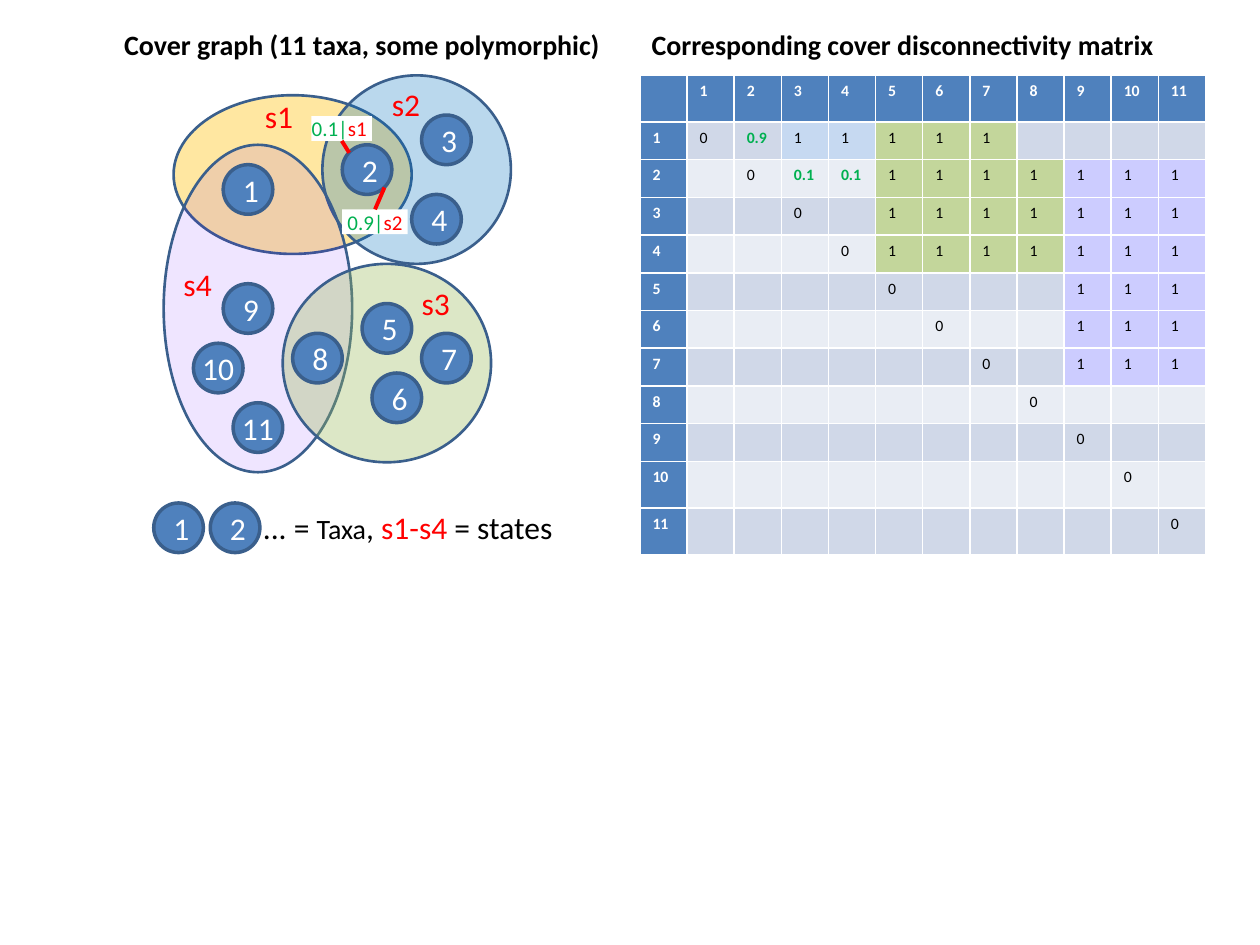
from pptx import Presentation
from pptx.dml.color import RGBColor
from pptx.enum.shapes import MSO_CONNECTOR, MSO_SHAPE
from pptx.enum.text import MSO_ANCHOR, MSO_AUTO_SIZE, PP_ALIGN
from pptx.oxml.ns import qn
from pptx.util import Inches, Mm, Pt
from lxml.etree import SubElement

COLORS = {
    "white": "FFFFFF", "black": "000000", "red": "FF0000",
    "blue": "4F81BD", "edge": "3A5F8C", "green": "00B050",
    "gold": "FFC000", "sky": "0070C0", "violet": "6600FF", "leaf": "9BBB59",
    "odd": "D0D8E8", "even": "E9EDF4",
    "pale": "C6D9F1", "moss": "C3D69B", "lilac": "CCCCFF",
}
# Positions and sizes below count cells of a 2 mm grid.
DISC = 5
STATES = [  # colour, opacity in percent, box
    ("gold", 37, (17.5, 9.6, 24, 16)),
    ("sky", 27, (32.5, 7.6, 19, 19)),
    ("violet", 10, (16.5, 14.6, 19, 33)),
    ("leaf", 34, (28.5, 26.6, 21, 20)),
]
NAMES = {"s1": (26.7, 9.8), "s2": (39.5, 8.6),
         "s3": (42.5, 28.6), "s4": (18.5, 26.7)}
TAXA = [(22.5, 16.6), (34.5, 14.6), (42.5, 11.6), (41.5, 19.6),
        (36.5, 30.6), (37.5, 37.6), (42.5, 33.6), (29.5, 33.6),
        (22.5, 28.6), (19.5, 34.6), (23.5, 40.6)]
KEYS = [(15.5, 50.7), (21.2, 50.7)]
MATRIX = [  # upper triangle, each row from its diagonal on
    "0 0.9 1 1 1 1 1",
    "0 0.1 0.1 1 1 1 1 1 1 1",
    "0 - 1 1 1 1 1 1 1",
    "0 1 1 1 1 1 1 1",
    "0 - - - 1 1 1",
    "0 - - 1 1 1",
    "0 - 1 1 1",
    "0", "0", "0", "0",
]


def grid(*cells):
    return [Mm(2 * n) for n in cells]


def rgb(name):
    return RGBColor.from_string(COLORS[name])


def paint(item, name):
    item.fill.solid()
    item.fill.fore_color.rgb = rgb(name)


def style(run, size, color, bold=False):
    font = run.font
    font.name, font.size, font.bold = "Calibri", Pt(size), bold
    font.color.rgb = rgb(color)


def write(shape, parts, align=None, wrap=False, pad=(0, 0), bold=False):
    """Fill a shape with one line made of (text, size, colour) parts."""
    frame = shape.text_frame
    frame.word_wrap = wrap
    frame.auto_size = MSO_AUTO_SIZE.NONE
    frame.vertical_anchor = MSO_ANCHOR.MIDDLE
    frame.margin_top = frame.margin_bottom = 0
    frame.margin_left, frame.margin_right = map(Inches, pad)
    line = frame.paragraphs[0]
    line.alignment = align
    for text, size, color in parts:
        run = line.add_run()
        run.text = text
        style(run, size, color, bold)


def oval(slide, box, fill, width):
    shape = slide.shapes.add_shape(MSO_SHAPE.OVAL, *grid(*box))
    shape.shadow.inherit = False
    paint(shape, fill)
    shape.line.color.rgb = rgb("edge")
    shape.line.width = Pt(width)
    return shape


def state(slide, color, share, box):
    shape = oval(slide, box, color, 1.5)
    tint = shape.fill._xPr.find(qn("a:solidFill"))[0]
    SubElement(tint, qn("a:alpha")).set("val", str(share * 1000))


def taxon(slide, num, spot):
    shape = oval(slide, (*spot, DISC, DISC), "blue", 2)
    pad = (0.1, 0.1) if num < 10 else (0, 0)
    write(shape, [(str(num), 18, "white")], PP_ALIGN.CENTER, True, pad)


def label(slide, box, parts):
    write(slide.shapes.add_textbox(*grid(*box)), parts)


def heading(shape, box, text):
    shape.left, shape.top, shape.width, shape.height = grid(*box)
    write(shape, [(text, 16, "black")], PP_ALIGN.CENTER, True, bold=True)


def tag(slide, box, weight, name, left):
    shape = slide.shapes.add_shape(MSO_SHAPE.RECTANGLE, *grid(*box))
    shape.shadow.inherit = False
    paint(shape, "white")
    shape.line.fill.background()
    write(shape, [(weight + "|", 12, "green"), (name, 12, "red")],
          PP_ALIGN.CENTER, pad=(left, 0.04))
    return shape


def link(slide, start, end):
    line = slide.shapes.add_connector(
        MSO_CONNECTOR.STRAIGHT, *grid(*start, *end))
    line.line.color.rgb = rgb("red")
    line.line.width = Pt(2.25)
    SubElement(line._element.spPr, qn("a:effectLst"))
    return line


def look(row, col, text):
    """Return the fill, font colour and weight of a matrix cell."""
    if row == 0 or col == 0:
        return "blue", "white", True
    band = "odd" if row % 2 else "even"
    if text == "1":
        band = "pale" if col < 5 else "moss" if col < 9 else "lilac"
    if "." in text:
        return band, "green", True
    return band, "black", False


def matrix(slide):
    count = len(MATRIX) + 1
    heads = [""] + [str(n) for n in range(1, count)]
    rows = [heads]
    for num, line in enumerate(MATRIX, 1):
        cells = [str(num)] + [""] * (num - 1) + line.replace("-", "").split(" ")
        rows.append(cells + [""] * (count - len(cells)))
    table = slide.shapes.add_table(
        count, count, *grid(64.5, 7.6, 57, 48.3)).table
    table.first_col = True
    for col in table.columns:
        col.width = Mm(9.5)
    for r, row in enumerate(rows):
        table.rows[r].height = Mm(9.4 if r in (0, 10, 11) else 7.6)
        for c, text in enumerate(row):
            cell = table.cell(r, c)
            fill, color, bold = look(r, c, text)
            paint(cell, fill)
            cell.text = text
            line = cell.text_frame.paragraphs[0]
            line.font.size = Pt(9)
            for run in line.runs:
                style(run, 9, color, bold)


def main():
    deck = Presentation()
    deck.slide_width, deck.slide_height = Inches(10), Inches(7.5)
    slide = deck.slides.add_slide(deck.slide_layouts[5])

    heading(slide.shapes.title, (9.5, 2.8, 54, 3.4),
            "Cover graph (11 taxa, some polymorphic)")
    heading(slide.shapes.add_textbox(0, 0, 0, 0), (64.5, 2.8, 53, 3.4),
            "Corresponding cover disconnectivity matrix")
    for color, share, box in STATES:
        state(slide, color, share, box)
    for num, spot in enumerate(TAXA, 1):
        taxon(slide, num, spot)
    matrix(slide)
    for name, spot in NAMES.items():
        label(slide, (*spot, 3, 3.8), [(name, 18, "red")])

    for num, spot in enumerate(KEYS, 1):
        taxon(slide, num, spot)
    label(slide, (26.5, 51.2, 30.1, 3.8), [
        ("... = ", 18, "black"), ("Taxa", 16, "black"), (", ", 18, "black"),
        ("s1-s4", 18, "red"), (" = states", 18, "black")])

    upper = tag(slide, (31.4, 11.7, 6.1, 2.5), "0.1", "s1", 0)
    lower = tag(slide, (34.5, 21.1, 6.6, 2.5), "0.9", "s2", 0.04)
    link(slide, (37.8, 21.1), (38.75, 18.9)).begin_connect(lower, 0)
    link(slide, (35.2, 15.4), (34.45, 14.2)).end_connect(upper, 2)
    deck.save("out.pptx")


if __name__ == "__main__":
    main()
